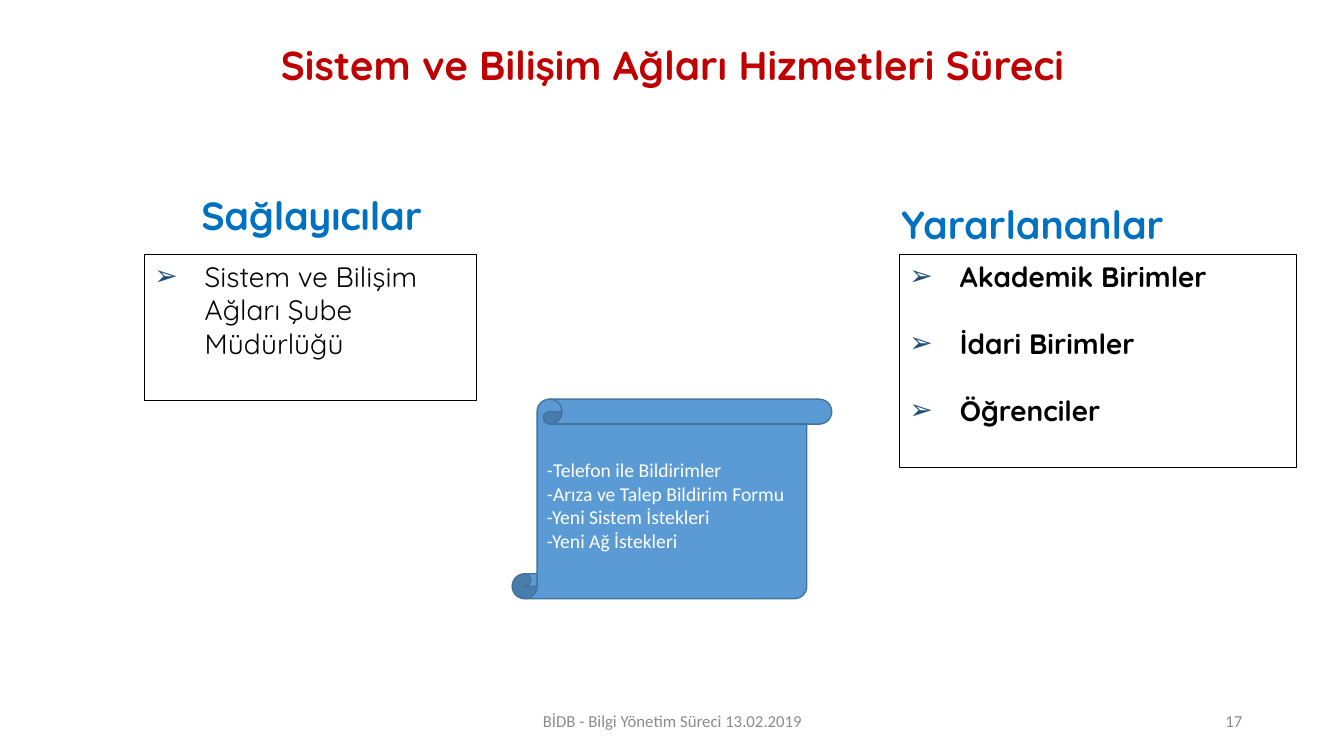
"""Build the slide on the system and network services process."""
from lxml import etree
from pptx import Presentation
from pptx import util as u
from pptx.dml.color import RGBColor
from pptx.enum import shapes, text
from pptx.oxml import ns

COLORS = {
    "title": "C00000", "heading": "0070C0", "ink": "000000", "bullet": "1F4E79",
    "scroll": "5B9BD5", "scroll_line": "43739E", "white": "FFFFFF", "footer": "8C8C8C",
}
WIDTH, HEIGHT = 13.33, 7.5
TITLE = "Sistem ve Bilişim Ağları Hizmetleri Süreci"
GROUPS = [
    {"heading": "Sağlayıcılar", "heading_at": (1.12, 1.85), "list_at": (1.43, 2.52, 3.3, 1.45),
     "items": ["Sistem ve Bilişim Ağları Şube Müdürlüğü"], "bold": False},
    {"heading": "Yararlananlar", "heading_at": (8.27, 1.94), "list_at": (8.92, 2.52, 3.94, 2.12),
     "items": ["Akademik Birimler", "İdari Birimler", "Öğrenciler"], "bold": True},
]
HEADING_SIZE = (3.94, 0.57)
REQUESTS = ["-Telefon ile Bildirimler", "-Arıza ve Talep Bildirim Formu",
            "-Yeni Sistem İstekleri", "-Yeni Ağ İstekleri"]
LEFT, CENTER, RIGHT = text.PP_ALIGN.LEFT, text.PP_ALIGN.CENTER, text.PP_ALIGN.RIGHT
TOP, MIDDLE = text.MSO_ANCHOR.TOP, text.MSO_ANCHOR.MIDDLE
FOOTERS = [
    ("BİDB - Bilgi Yönetim Süreci 13.02.2019", (4.42, 6.95, 4.5, 0.4), CENTER),
    ("17", (9.42, 6.95, 3, 0.4), RIGHT),
]
FORMATS = {
    "title": {"name": "Quicksand", "size": u.Pt(28.8), "bold": True},
    "heading": {"name": "Quicksand", "size": u.Pt(28), "bold": True},
    "ink": {"name": "Quicksand", "size": u.Pt(20)},
    "white": {"name": "Calibri", "size": u.Pt(14)},
    "footer": {"name": "Calibri", "size": u.Pt(12)},
}


def rgb(name):
    return RGBColor.from_string(COLORS[name])


def place(shape, box):
    for side, value in zip(("left", "top", "width", "height"), box):
        setattr(shape, side, u.Inches(value))


def write(shape, lines, style, align, anchor, bold=None, gap=0, spacing=1.0):
    frame = shape.text_frame
    frame.text = "\n".join(lines)
    frame_format = {"word_wrap": True, "auto_size": text.MSO_AUTO_SIZE.NONE,
                    "vertical_anchor": anchor}
    for name, value in frame_format.items():
        setattr(frame, name, value)
    for index, paragraph in enumerate(frame.paragraphs):
        paragraph_format = {"alignment": align, "line_spacing": spacing,
                            "space_before": u.Pt(gap if index else 0), "space_after": u.Pt(0)}
        for name, value in paragraph_format.items():
            setattr(paragraph, name, value)
        for run in paragraph.runs:
            for name, value in FORMATS[style].items():
                setattr(run.font, name, value)
            if bold is not None:
                run.font.bold = bold
            run.font.color.rgb = rgb(style)


def add_bullets(shape):
    for paragraph in shape.text_frame.paragraphs:
        properties = paragraph._p.get_or_add_pPr()
        properties.set("marL", str(u.Inches(0.5)))
        properties.set("indent", str(-u.Inches(0.5)))
        color = etree.SubElement(properties, ns.qn("a:buClr"))
        etree.SubElement(color, ns.qn("a:srgbClr"), val=COLORS["bullet"])
        etree.SubElement(properties, ns.qn("a:buChar"), char="➢")


def outline(shape, color, width):
    shape.line.color.rgb = rgb(color)
    shape.line.width = u.Pt(width)


def main():
    presentation = Presentation()
    presentation.slide_width, presentation.slide_height = u.Inches(WIDTH), u.Inches(HEIGHT)
    slide = presentation.slides.add_slide(presentation.slide_layouts.get_by_name("Comparison"))
    title, *bodies = slide.placeholders

    place(title, (0.92, 0.4, 11.5, 1.45))
    write(title, [TITLE], "title", CENTER, TOP, spacing=0.9)

    for group, heading, listing in zip(GROUPS, bodies[::2], bodies[1::2]):
        place(heading, group["heading_at"] + HEADING_SIZE)
        write(heading, [group["heading"]], "heading", CENTER, TOP)
        place(listing, group["list_at"])
        write(listing, group["items"], "ink", LEFT, TOP, bold=group["bold"], gap=24)
        add_bullets(listing)
        outline(listing, "ink", 0.75)

    scroll = slide.shapes.add_shape(shapes.MSO_SHAPE.VERTICAL_SCROLL, 0, 0, 0, 0)
    place(scroll, (5.08, 3.96, 3.17, 1.98))
    scroll.shadow.inherit = False
    scroll.fill.solid()
    scroll.fill.fore_color.rgb = rgb("scroll")
    outline(scroll, "scroll_line", 1)
    write(scroll, REQUESTS, "white", LEFT, MIDDLE)

    for words, box, align in FOOTERS:
        footer = slide.shapes.add_textbox(0, 0, 0, 0)
        place(footer, box)
        write(footer, [words], "footer", align, MIDDLE)

    presentation.save("out.pptx")


if __name__ == "__main__":
    main()
